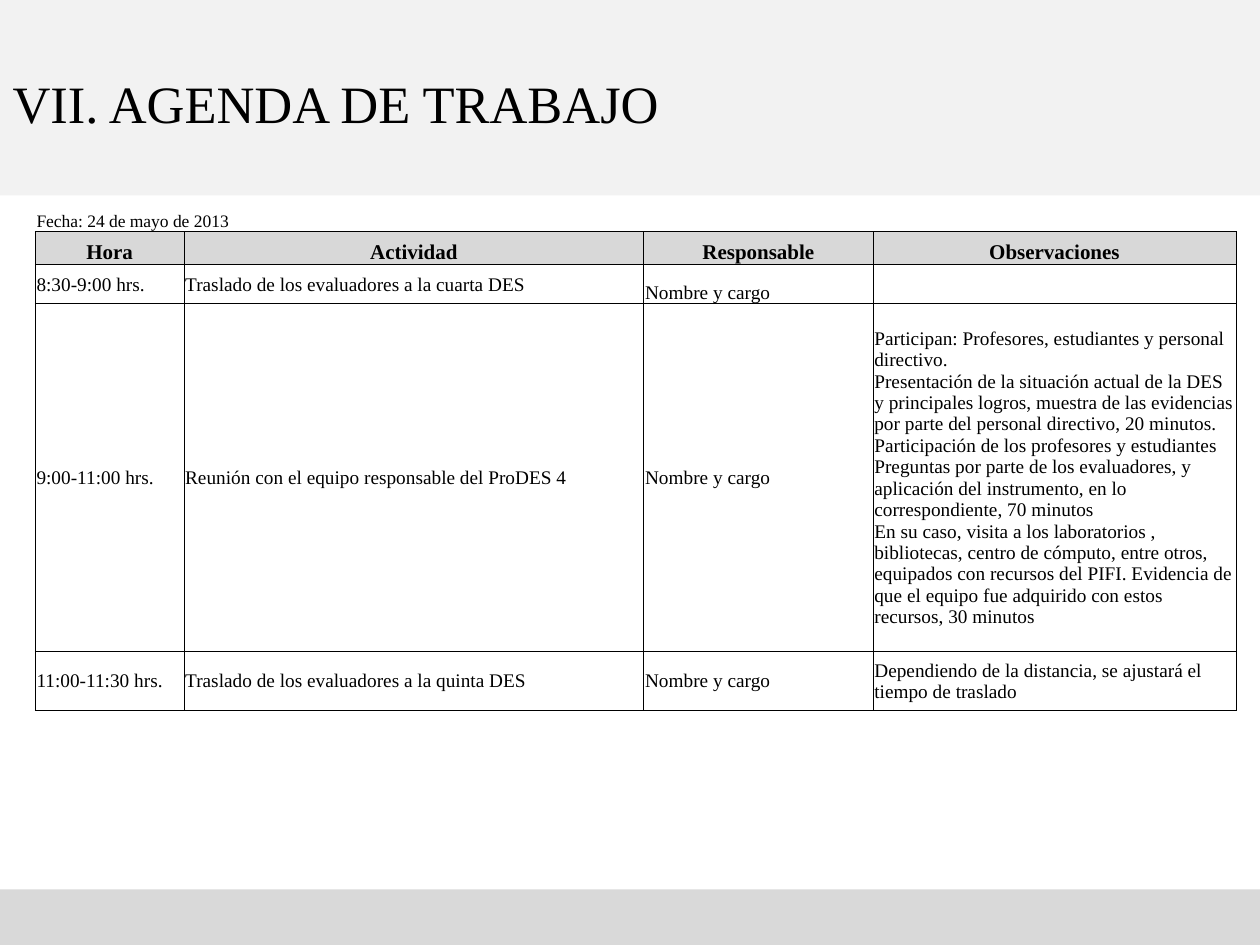
from lxml.etree import SubElement
from pptx import Presentation
from pptx.dml.color import RGBColor
from pptx.enum.shapes import MSO_SHAPE
from pptx.enum.text import MSO_ANCHOR, PP_ALIGN
from pptx.oxml.ns import qn
from pptx.util import Inches, Pt

MID, LOW = MSO_ANCHOR.MIDDLE, MSO_ANCHOR.BOTTOM
NAME = "Nombre y cargo"
HEAD = ["Hora", "Actividad", "Responsable", "Observaciones"]
ROWS = [
    ["8:30-9:00 hrs.", "Traslado de los evaluadores a la cuarta DES", NAME, ""],
    ["9:00-11:00 hrs.", "Reunión con el equipo responsable del ProDES 4", NAME,
     "Participan: Profesores, estudiantes y personal directivo.\v"
     "Presentación de la situación actual de la DES y principales logros, "
     "muestra de las evidencias por parte del personal directivo, 20 minutos.\n"
     "Participación de los profesores y estudiantes Preguntas por parte de los "
     "evaluadores, y aplicación del instrumento, en lo correspondiente, 70 minutos\n"
     "En su caso, visita a los laboratorios , bibliotecas, centro de cómputo, "
     "entre otros, equipados con recursos del PIFI. Evidencia de que el equipo "
     "fue adquirido con estos recursos, 30 minutos"],
    ["11:00-11:30 hrs.", "Traslado de los evaluadores a la quinta DES", NAME,
     "Dependiendo de la distancia, se ajustará el tiempo de traslado"],
]
WIDTHS = [1.18, 3.65, 1.82, 2.88]
HEIGHTS = [0.17, 0.26, 0.31, 2.76, 0.47]


def color(code):
    """Turn a hex string into a colour."""
    return RGBColor.from_string(code)


class Deck:
    """Hold the style and the current slide."""

    face, ink = "Times New Roman", "000000"

    def __init__(self, show):
        """Add a title-only slide."""
        self.slide = show.slides.add_slide(show.slide_layouts[5])

    def text(self, frame, words, size, bold=False, align=PP_ALIGN.LEFT):
        """Fill a text frame run by run."""
        for i, part in enumerate(words.split("\n")):
            para = frame.add_paragraph() if i else frame.paragraphs[0]
            para.alignment = align
            for j, line in enumerate(part.split("\v")):
                if j:
                    para.add_line_break()
                run = para.add_run()
                run.text = line
                font = run.font
                font.name, font.size, font.bold = self.face, Pt(size), bold
                font.color.rgb = color(self.ink)

    def band(self, top, height, fill):
        """Lay a full-width band behind the rest."""
        box = self.slide.shapes.add_shape(
            MSO_SHAPE.RECTANGLE, 0, Inches(top), Inches(10), Inches(height))
        box.shadow.inherit = False
        box.fill.solid()
        box.fill.fore_color.rgb = color(fill)
        box.line.fill.background()
        self.slide.shapes.element.insert(2, box.element)

    def title(self, words):
        """Place and fill the title."""
        box = self.slide.shapes.title
        box.left, box.top = 0, Inches(0.07)
        box.width, box.height = Inches(10), Inches(1.49)
        box.text_frame.vertical_anchor = MID
        self.text(box.text_frame, words, 30)

    def grid(self, left, top, widths, heights):
        """Add a plain table."""
        table = self.slide.shapes.add_table(
            len(heights), len(widths), Inches(left), Inches(top),
            Inches(sum(widths)), Inches(sum(heights))).table
        table.first_row = table.horz_banding = False
        for col, width in zip(table.columns, widths):
            col.width = Inches(width)
        for row, height in zip(table.rows, heights):
            row.height = Inches(height)
        return table

    def cell(self, cell, words, size, anchor=MID, sides="LRTB", fill=None, **look):
        """Format and fill one table cell."""
        cell.margin_left = cell.margin_right = cell.margin_top = Inches(0.01)
        cell.margin_bottom = 0
        cell.vertical_anchor = anchor
        props = cell._tc.get_or_add_tcPr()
        for side in "LRTB":
            line = SubElement(props, qn("a:ln" + side), w=str(Pt(0.5)))
            if side in sides:
                paint = SubElement(line, qn("a:solidFill"))
                SubElement(paint, qn("a:srgbClr"), val=self.ink)
            else:
                SubElement(line, qn("a:noFill"))
        if fill:
            cell.fill.solid()
            cell.fill.fore_color.rgb = color(fill)
        else:
            cell.fill.background()
        if words:
            self.text(cell.text_frame, words, size, **look)
        else:
            para = cell.text_frame.paragraphs[0]._p
            SubElement(para, qn("a:endParaRPr"), sz=str(size * 100))


def main():
    """Build the agenda slide."""
    show = Presentation()
    show.slide_width, show.slide_height = Inches(10), Inches(7.5)
    deck = Deck(show)
    deck.band(0, 1.55, "F2F2F2")
    deck.band(7.06, 0.44, "D9D9D9")
    deck.title("VII. AGENDA DE TRABAJO")
    table = deck.grid(0.28, 1.66, WIDTHS, HEIGHTS)
    for c, head in enumerate(HEAD):
        date = "" if c else "Fecha: 24 de mayo de 2013"
        deck.cell(table.cell(0, c), date, 10, LOW, "B")
        deck.cell(table.cell(1, c), head, 12, LOW, fill="D8D8D8",
                  bold=True, align=PP_ALIGN.CENTER)
    table.cell(0, 0).merge(table.cell(0, 1))
    for r, row in enumerate(ROWS, 2):
        for c, words in enumerate(row):
            anchor = LOW if (r, c) == (2, 2) else MID
            deck.cell(table.cell(r, c), words, 11, anchor)
    show.save("out.pptx")


if __name__ == "__main__":
    main()
